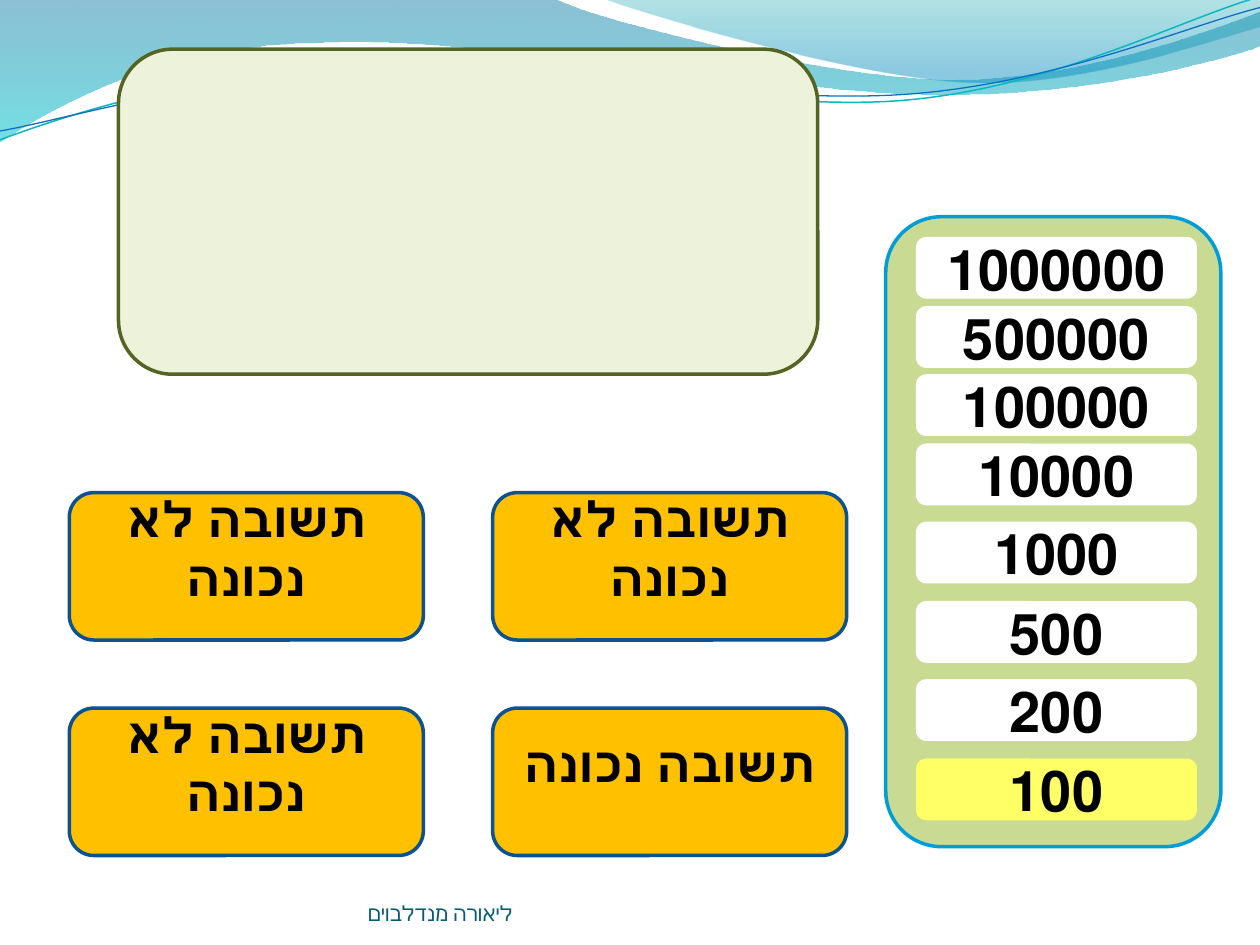
"""Build a quiz slide with a question panel, four answers and a prize ladder."""
from pptx import Presentation
from pptx.dml.color import RGBColor
from pptx.enum.shapes import MSO_SHAPE as SHAPE
from pptx.enum.text import MSO_ANCHOR as ANCHOR, PP_ALIGN as ALIGN
from pptx.oxml.ns import qn
from pptx.util import Inches, Pt
from lxml.etree import SubElement


def color(value):
    return RGBColor.from_string(value)


def write(sp, text, size=28, ink="000000", bold=True, align=ALIGN.CENTER,
          anchor=ANCHOR.MIDDLE, insets=(0.1, 0.05, 0.1, 0.05)):
    tf = sp.text_frame
    tf.word_wrap = True
    tf.vertical_anchor = anchor
    tf.margin_left, tf.margin_top, tf.margin_right, tf.margin_bottom = map(Inches, insets)
    p = tf.paragraphs[0]
    p.alignment = align
    p._p.get_or_add_pPr().set("rtl", "1")
    r = p.add_run()
    r.text = text
    r.font.size, r.font.bold, r.font.name = Pt(size), bold, "Cambria"
    r.font.color.rgb = color(ink)


prs = Presentation()
prs.slide_width, prs.slide_height = Inches(10), Inches(7.5)
s = prs.slides.add_slide(prs.slide_layouts[6])

upper_wave = [
    [(0, -0.01)], [(4.4, -0.01)],
    [(4.76, 0.17), (6.64, 0.63), (7.58, 0.63)],
    [(8.53, 0.63), (9.58, 0.26), (10, 0.09)], [(10.01, 0.36)],
    [(9.83, 0.44), (8.7, 0.76), (7.46, 0.75)],
    [(6.22, 0.75), (3.82, 0.28), (2.57, 0.34)],
    [(1.29, 0.35), (0.46, 0.83), (-0.01, 1.13)],
]
right_wave = [
    [(4.79, -0.01)], [(5.09, 0.11), (6.82, 0.62), (7.69, 0.65)],
    [(8.56, 0.69), (9.61, 0.32), (10, 0.21)], [(10, 0)],
]
teal_line = [
    [(0, 1.11)], [(0.48, 0.93), (1.58, 0.57), (2.77, 0.52)],
    [(3.95, 0.47), (5.93, 0.89), (7.13, 0.8)],
    [(8.33, 0.71), (9.38, 0.15), (9.98, -0.02)],
]
blue_line = [
    [(0, 1.04)], [(0.47, 0.96), (1.64, 0.61), (2.83, 0.56)],
    [(4.03, 0.51), (5.97, 0.83), (7.17, 0.75)],
    [(8.36, 0.67), (9.41, 0.21), (10, 0.06)],
]
waves = [
    (upper_wave, [(0, "0074A1", 45), (1, "00C6CF", 55)], None),
    (right_wave, [(0, "00A1A9", 30), (0.8, "008BBF", 45)], None),
    (teal_line, None, ("0AB8BF", 0.85)),
    (blue_line, None, ("0F6FC6", 0.75)),
]
for segments, stops, line in waves:
    points = [(Inches(x), Inches(y)) for segment in segments for x, y in segment]
    builder = s.shapes.build_freeform(*points[0])
    builder.add_line_segments(points[1:], close=stops is not None)
    sp = builder.convert_to_shape()
    sp.shadow.inherit = False
    straight = iter(list(sp._element.iter(qn("a:lnTo"))))
    for segment in segments[1:]:
        pieces = [next(straight) for _ in segment]
        if len(pieces) == 3:
            outline = pieces[0].getparent()
            curve = SubElement(outline, qn("a:cubicBezTo"))
            outline.replace(pieces[0], curve)
            for piece in pieces:
                curve.append(piece[0])
            for piece in pieces[1:]:
                outline.remove(piece)
    if stops:
        sp.fill.gradient()
        sp.fill.gradient_angle = 270
        for stop, (position, tint, _) in zip(sp.fill.gradient_stops, stops):
            stop.position = position
            stop.color.rgb = color(tint)
        for clr, (_, _, opacity) in zip(list(sp._element.spPr.iter(qn("a:srgbClr"))), stops):
            SubElement(clr, qn("a:alpha"), val=str(opacity * 1000))
        sp.line.fill.background()
    else:
        sp.fill.background()
        sp.line.color.rgb, sp.line.width = color(line[0]), Pt(line[1])

ROUND = SHAPE.ROUNDED_RECTANGLE
wrong, right = "תשובה לא נכונה", "תשובה נכונה"
answer = {"insets": (0.1, 0.05, 0.1, 0.35)}
boxes = [
    (SHAPE.FLOWCHART_ALTERNATE_PROCESS, (0.94, 0.39, 5.55, 2.58), "EDF3DB", "546422", None, {}),
    (ROUND, (7.03, 1.72, 2.66, 5), "C9DA92", "009DD9", None, {}),
]
for top, row in ((3.91, (wrong, wrong)), (5.62, (wrong, right))):
    for left, text in zip((0.55, 3.91), row):
        boxes.append((ROUND, (left, top, 2.81, 1.17), "FFC000", "0B5292", text, answer))

prizes = ["100", "200", "500", "1000", "10000", "100000", "500000", "1000000"]
for i, prize in enumerate(prizes):
    top = round(6.02 - 0.625 * min(i, 4) - 0.547 * max(i - 4, 0), 2)
    fill = "FFFFFF" if i else "FFFF66"
    boxes.append((ROUND, (7.27, top, 2.23, 0.49), fill, None, prize, {"size": 32}))

for kind, place, fill, outline, text, style in boxes:
    sp = s.shapes.add_shape(kind, *map(Inches, place))
    sp.shadow.inherit = False
    sp.fill.solid()
    sp.fill.fore_color.rgb = color(fill)
    if outline:
        sp.line.color.rgb, sp.line.width = color(outline), Pt(2)
    else:
        sp.line.fill.background()
    if text:
        write(sp, text, **style)

footer = s.shapes.add_textbox(*map(Inches, (2.92, 6.95, 3.67, 0.4)))
write(footer, "ליאורה מנדלבוים", size=12, ink="045D75", bold=False,
      align=ALIGN.LEFT, anchor=ANCHOR.BOTTOM, insets=(0, 0, 0, 0))

prs.save("out.pptx")
